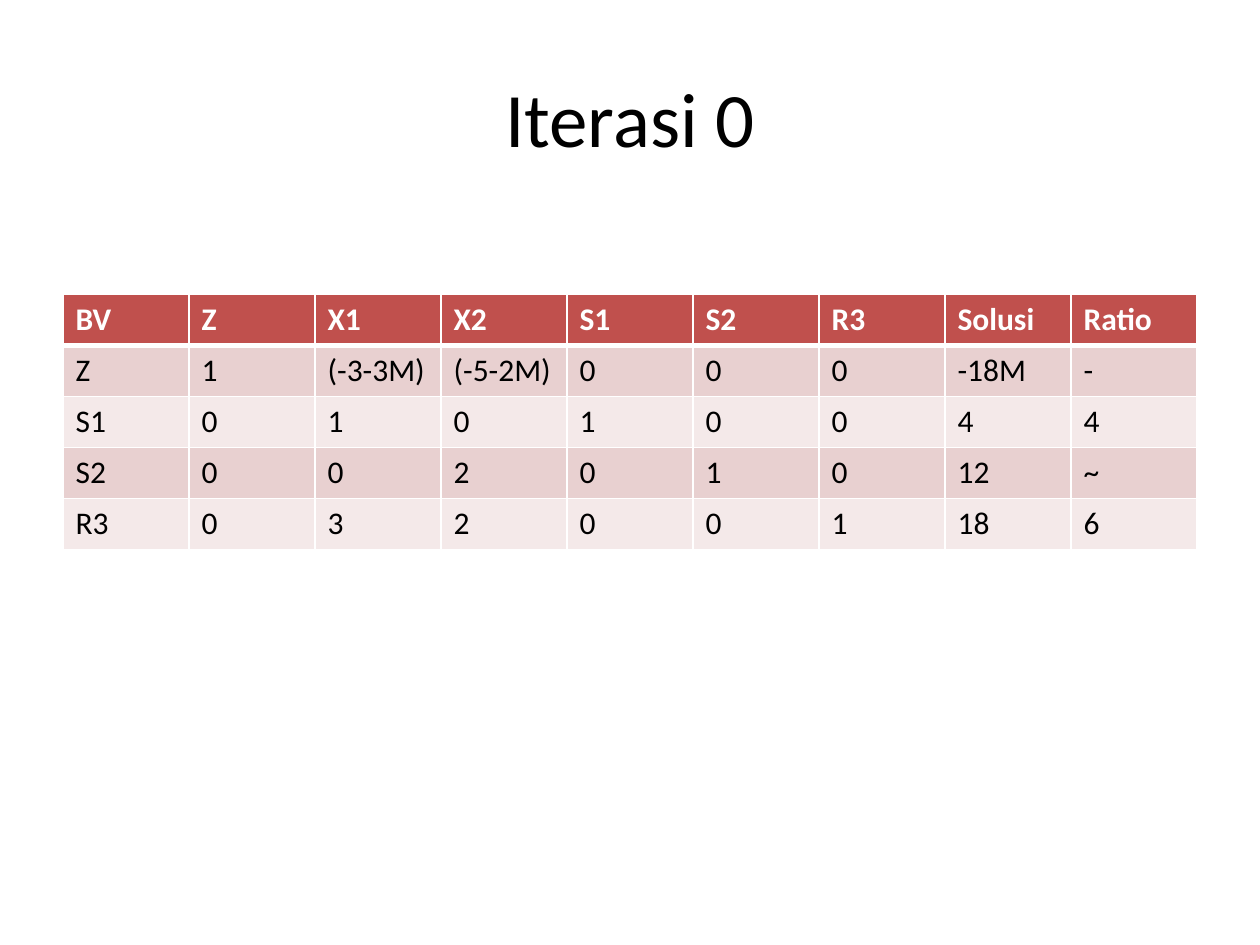
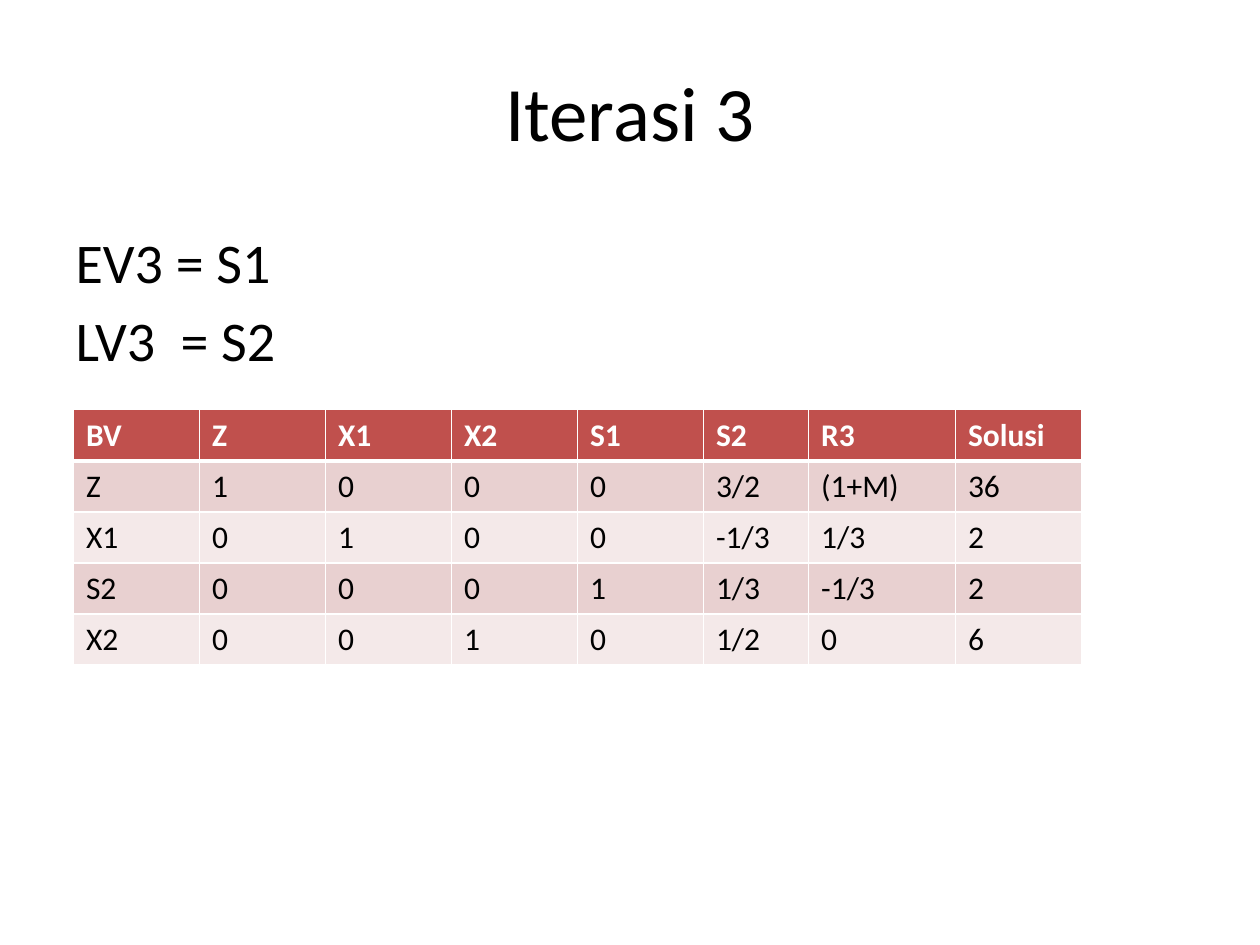
from lxml import etree
from pptx import Presentation
from pptx.dml.color import RGBColor
from pptx.enum.text import MSO_ANCHOR, PP_ALIGN
from pptx.oxml.ns import qn
from pptx.util import Cm, Pt

CENTER = PP_ALIGN.CENTER
MIDDLE = MSO_ANCHOR.MIDDLE

CONTENT_LAYOUT = 1
TITLE_LAYOUT = 5

FONT = "Calibri"
BLACK, WHITE = "000000", "FFFFFF"
HEADER_FILL = "C0504D"
BAND_FILLS = ("E8D0D0", "F4E9E9")

TITLE_FORMAT = {"name": FONT, "size": Pt(44)}
LIST_FORMAT = {"name": FONT, "size": Pt(32)}
HEADER_FORMAT = {"name": FONT, "size": Pt(18), "bold": True}
CELL_FORMAT = {"name": FONT, "size": Pt(18), "bold": False}

MARGIN = 1.27
CONTENT_WIDTH = 22.86
COLUMN_WIDTH = 2.54
ROW_HEIGHT = 1.03
THIN, THICK = Pt(1), Pt(3)

ITERATION_0 = [
    ["BV", "Z", "X1", "X2", "S1", "S2", "R3", "Solusi", "Ratio"],
    ["Z", "1", "(-3-3M)", "(-5-2M)", "0", "0", "0", "-18M", "-"],
    ["S1", "0", "1", "0", "1", "0", "0", "4", "4"],
    ["S2", "0", "0", "2", "0", "1", "0", "12", "~"],
    ["R3", "0", "3", "2", "0", "0", "1", "18", "6"],
]
ITERATION_3 = [
    ["BV", "Z", "X1", "X2", "S1", "S2", "R3", "Solusi"],
    ["Z", "1", "0", "0", "0", "3/2", "(1+M)", "36"],
    ["X1", "0", "1", "0", "0", "-1/3", "1/3", "2"],
    ["S2", "0", "0", "0", "1", "1/3", "-1/3", "2"],
    ["X2", "0", "0", "1", "0", "1/2", "0", "6"],
]


def color(hex_value):
    return RGBColor.from_string(hex_value)


class SimplexDeck:
    """Holds the shared style and the slide being built."""

    def __init__(self):
        self.deck = Presentation()
        self.deck.slide_width = Cm(25.4)
        self.deck.slide_height = Cm(19.05)
        self.slide = None

    def add_span(self, para, text, font_format, text_color=BLACK):
        span = para.add_run()
        span.text = text
        for name, value in font_format.items():
            setattr(span.font, name, value)
        span.font.color.rgb = color(text_color)

    def place(self, box, top, height):
        frame = {"left": MARGIN, "top": top,
                 "width": CONTENT_WIDTH, "height": height}
        for name, value in frame.items():
            setattr(box, name, Cm(value))

    def add_page(self, layout, title, title_top):
        self.slide = self.deck.slides.add_slide(self.deck.slide_layouts[layout])
        box = self.slide.shapes.title
        self.place(box, title_top, 3.18)
        box.text_frame.vertical_anchor = MIDDLE
        para = box.text_frame.paragraphs[0]
        para.alignment = CENTER
        self.add_span(para, title, TITLE_FORMAT)

    def add_list(self, lines):
        """Fill the body placeholder with lines that carry no bullet."""
        box = self.slide.placeholders[1]
        self.place(box, 4.45, 12.57)
        frame = box.text_frame
        for index, line in enumerate(lines):
            para = frame.add_paragraph() if index else frame.paragraphs[0]
            self.add_span(para, line, LIST_FORMAT)
            properties = para._p.get_or_add_pPr()
            etree.SubElement(properties, qn("a:buNone"))

    def add_borders(self, cell, top, bottom):
        properties = cell._tc.get_or_add_tcPr()
        widths = {"lnL": THIN, "lnR": THIN, "lnT": top, "lnB": bottom}
        for side, width in widths.items():
            line = etree.SubElement(properties, qn(f"a:{side}"), w=str(width))
            fill = etree.SubElement(line, qn("a:solidFill"))
            etree.SubElement(fill, qn("a:srgbClr"), val=WHITE)

    def add_tableau(self, rows, left, top, special_widths=None):
        """Draw a simplex tableau; special_widths maps column index to cm."""
        special_widths = special_widths or {}
        widths = [special_widths.get(index, COLUMN_WIDTH)
                  for index in range(len(rows[0]))]
        table = self.slide.shapes.add_table(
            len(rows), len(widths), Cm(left), Cm(top),
            Cm(sum(widths)), Cm(ROW_HEIGHT * len(rows))).table
        for column, width in zip(table.columns, widths):
            column.width = Cm(width)
        for row_index, values in enumerate(rows):
            is_header = row_index == 0
            row_fill = HEADER_FILL if is_header else BAND_FILLS[(row_index - 1) % 2]
            row_format = HEADER_FORMAT if is_header else CELL_FORMAT
            text_color = WHITE if is_header else BLACK
            for column_index, value in enumerate(values):
                cell = table.cell(row_index, column_index)
                self.add_borders(cell,
                                 top=THICK if row_index == 1 else THIN,
                                 bottom=THICK if is_header else THIN)
                cell.fill.solid()
                cell.fill.fore_color.rgb = color(row_fill)
                self.add_span(cell.text_frame.paragraphs[0], value,
                              row_format, text_color)


def main():
    simplex = SimplexDeck()

    simplex.add_page(TITLE_LAYOUT, "Iterasi 0", title_top=0.76)
    simplex.add_tableau(ITERATION_0, left=MARGIN, top=5.93)

    simplex.add_page(CONTENT_LAYOUT, "Iterasi 3", title_top=0.64)
    simplex.add_list(["EV3 = S1", "LV3  = S2"])
    simplex.add_tableau(ITERATION_3, left=1.48, top=8.26,
                        special_widths={5: 2.12, 6: 2.96})

    simplex.deck.save("out.pptx")


if __name__ == "__main__":
    main()
